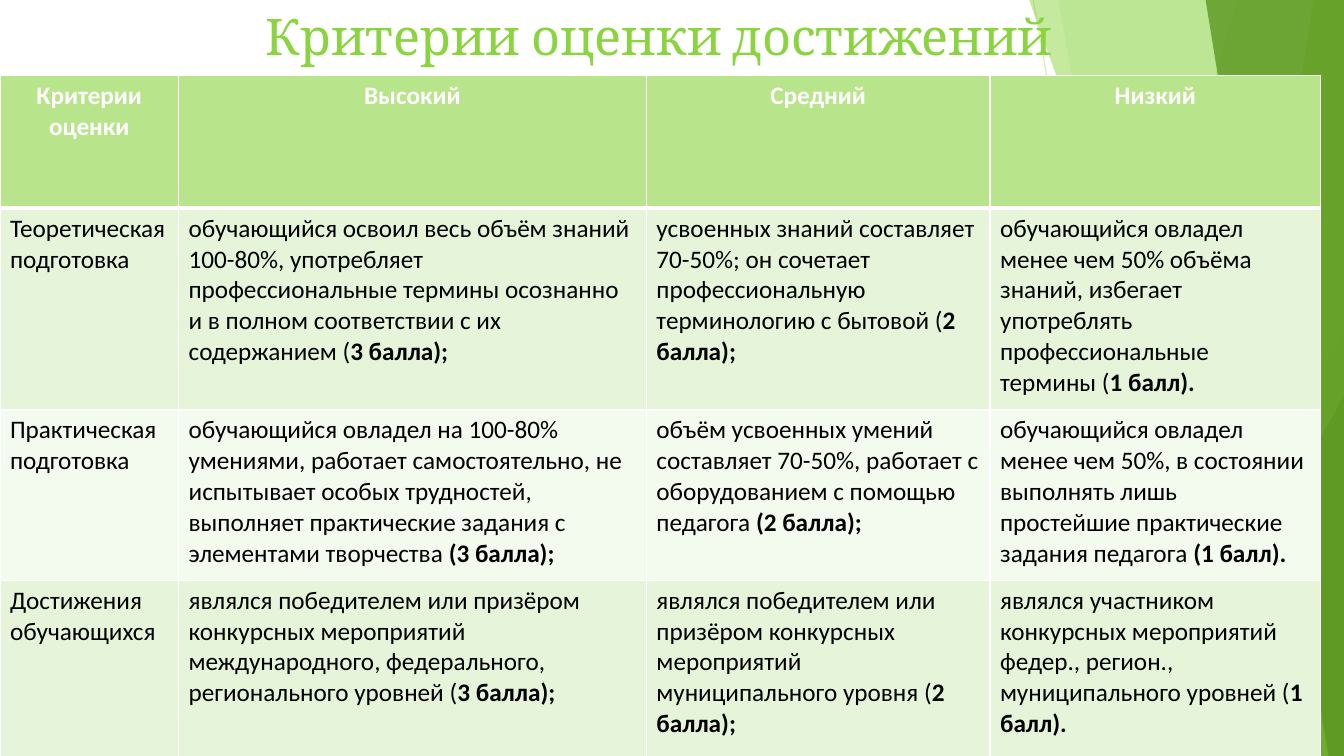
from dataclasses import dataclass

from lxml.etree import SubElement
from pptx import Presentation
from pptx.dml.color import RGBColor
from pptx.enum.shapes import MSO_CONNECTOR, MSO_SHAPE
from pptx.enum.text import MSO_ANCHOR, PP_ALIGN
from pptx.oxml.ns import qn
from pptx.util import Cm, Pt

COLORS = {
    "pale": "B8E58B",
    "green": "8AD440",
    "dark": "5C9622",
    "band": "E6F5DA",
    "light": "F3FAEE",
    "white": "FFFFFF",
    "black": "000000",
}
WIDTH, HEIGHT = 33.87, 19.05


@dataclass
class Ray:
    x1: float
    y1: float
    x2: float
    y2: float


@dataclass
class Facet:
    top_x: float
    bottom_x: float
    color: str
    opacity: int


@dataclass
class Corner:
    left: float
    top: float
    width: float
    apex: float
    color: str
    opacity: int


@dataclass
class Cell:
    text: str
    score: str = ""


DECOR = [
    Ray(26.04, 0, 29.41, HEIGHT),
    Ray(WIDTH, 10.24, 20.62, HEIGHT),
    Facet(31.19, 25.5, "pale", 36),
    Facet(26.67, 30.05, "pale", 20),
    Corner(24.82, 8.46, 9.05, 1, "pale", 72),
    Facet(25.93, 32.79, "green", 50),
    Facet(33.1, 30.28, "green", 70),
    Facet(30.38, 33.48, "dark", 80),
    Corner(28.8, 9.98, 5.07, 1, "dark", 66),
    Corner(0, 11.15, 1.24, 0, "green", 70),
]

COL_WIDTHS = [4.5, 11.79, 8.66, 8.33]
ROW_HEIGHTS = [3.35, 5.08, 4.29, 5]
ROW_FILLS = ["pale", "band", "light", "band"]
ROWS = [
    [Cell("Критерии оценки"), Cell("Высокий"), Cell("Средний"), Cell("Низкий")],
    [
        Cell("Теоретическая подготовка"),
        Cell("обучающийся освоил весь объём знаний 100-80%, употребляет профессиональные "
             "термины осознанно и в полном соответствии с их содержанием (", "3 балла);"),
        Cell("усвоенных знаний составляет 70-50%; он сочетает профессиональную "
             "терминологию с бытовой (", "2 балла);"),
        Cell("обучающийся овладел менее чем 50% объёма знаний, избегает употреблять "
             "профессиональные термины (", "1 балл)."),
    ],
    [
        Cell("Практическая подготовка"),
        Cell("обучающийся овладел на 100-80% умениями, работает самостоятельно, не "
             "испытывает особых трудностей, выполняет практические задания с элементами "
             "творчества ", "(3 балла);"),
        Cell("объём усвоенных умений составляет 70-50%, работает с оборудованием с "
             "помощью педагога ", "(2 балла);"),
        Cell("обучающийся овладел менее чем 50%, в состоянии выполнять лишь простейшие "
             "практические задания педагога ", "(1 балл)."),
    ],
    [
        Cell("Достижения обучающихся"),
        Cell("являлся победителем или призёром конкурсных мероприятий международного, "
             "федерального, регионального уровней (", "3 балла);"),
        Cell("являлся победителем или призёром конкурсных мероприятий муниципального "
             "уровня (", "2 балла);"),
        Cell("являлся участником конкурсных мероприятий федер., регион., муниципального "
             "уровней (", "1 балл)."),
    ],
]


def rgb(name: str) -> RGBColor:
    return RGBColor.from_string(COLORS[name])


def set_opacity(element, percent: int) -> None:
    color = element.find(".//" + qn("a:srgbClr"))
    SubElement(color, qn("a:alpha")).set("val", str(percent * 1000))


def style_run(r, font: str, size: int, color: str, bold: bool = False) -> None:
    r.font.name = font
    r.font.size = Pt(size)
    r.font.bold = bold
    r.font.color.rgb = rgb(color)


def draw_ray(shapes, ray: Ray) -> None:
    line = shapes.add_connector(
        MSO_CONNECTOR.STRAIGHT, Cm(ray.x1), Cm(ray.y1), Cm(ray.x2), Cm(ray.y2))
    line.line.color.rgb = rgb("pale")
    line.line.width = Pt(0.75)
    props = line.element.spPr
    set_opacity(props, 70)
    SubElement(props, qn("a:effectLst"))


def draw_panel(shapes, panel: Facet | Corner) -> None:
    if isinstance(panel, Facet):
        builder = shapes.build_freeform(Cm(panel.top_x), Cm(-0.02))
        builder.add_line_segments([
            (Cm(WIDTH), Cm(-0.02)), (Cm(WIDTH), Cm(HEIGHT)), (Cm(panel.bottom_x), Cm(HEIGHT))])
        sp = builder.convert_to_shape()
    else:
        sp = shapes.add_shape(
            MSO_SHAPE.ISOSCELES_TRIANGLE, Cm(panel.left), Cm(panel.top),
            Cm(panel.width), Cm(HEIGHT - panel.top))
        sp.adjustments[0] = panel.apex
    sp.shadow.inherit = False
    sp.line.fill.background()
    sp.fill.solid()
    sp.fill.fore_color.rgb = rgb(panel.color)
    set_opacity(sp.element.spPr, panel.opacity)


def draw_title(shapes) -> None:
    tf = shapes.add_textbox(Cm(1.24), 0, Cm(30.73), Cm(2.06)).text_frame
    tf.word_wrap = True
    tf.vertical_anchor = MSO_ANCHOR.TOP
    tf.text = "Критерии оценки достижений"
    p = tf.paragraphs[0]
    p.alignment = PP_ALIGN.CENTER
    style_run(p.runs[0], "Cambria", 36, "green")


def set_borders(cell, top: int, bottom: int) -> None:
    props = cell._tc.get_or_add_tcPr()
    for tag, width in (("lnL", 1), ("lnR", 1), ("lnT", top), ("lnB", bottom)):
        ln = SubElement(props, qn("a:" + tag), w=str(Pt(width)))
        fill = SubElement(ln, qn("a:solidFill"))
        SubElement(fill, qn("a:srgbClr")).set("val", COLORS["white"])


def draw_table(shapes) -> None:
    table = shapes.add_table(
        len(ROWS), len(COL_WIDTHS), 0, Cm(1.9),
        Cm(sum(COL_WIDTHS)), Cm(sum(ROW_HEIGHTS))).table
    for column, width in zip(table.columns, COL_WIDTHS):
        column.width = Cm(width)
    for i, (row, height) in enumerate(zip(table.rows, ROW_HEIGHTS)):
        row.height = Cm(height)
        header = i == 0
        for cell, content in zip(row.cells, ROWS[i]):
            set_borders(cell, 3 if i == 1 else 1, 3 if header else 1)
            cell.fill.solid()
            cell.fill.fore_color.rgb = rgb(ROW_FILLS[i])
            p = cell.text_frame.paragraphs[0]
            p.alignment = PP_ALIGN.CENTER if header else PP_ALIGN.LEFT
            for text, bold in ((content.text, header), (content.score, True)):
                if text:
                    r = p.add_run()
                    r.text = text
                    style_run(r, "Calibri", 18, "white" if header else "black", bold)


def main() -> None:
    prs = Presentation()
    prs.slide_width, prs.slide_height = Cm(WIDTH), Cm(HEIGHT)
    s = prs.slides.add_slide(prs.slide_layouts[6])
    for item in DECOR:
        if isinstance(item, Ray):
            draw_ray(s.shapes, item)
        else:
            draw_panel(s.shapes, item)
    draw_title(s.shapes)
    draw_table(s.shapes)
    prs.save("out.pptx")


if __name__ == "__main__":
    main()
